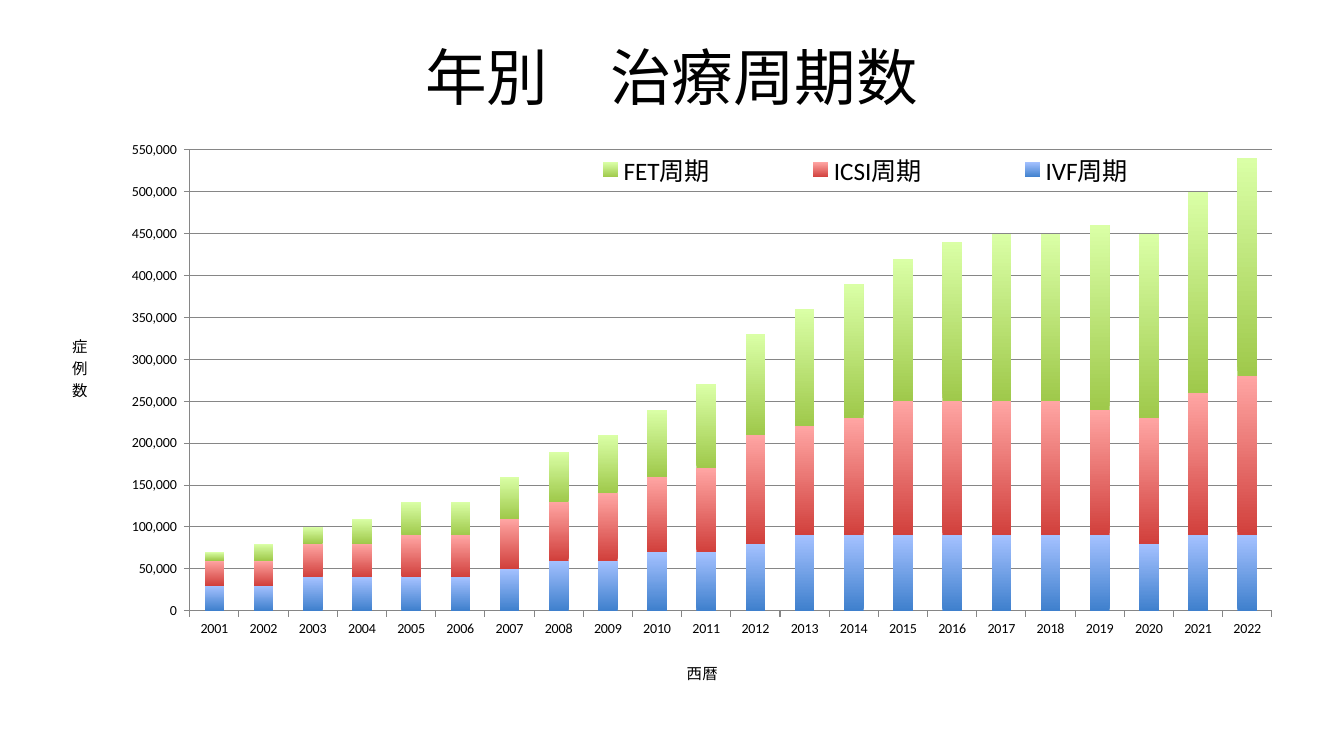
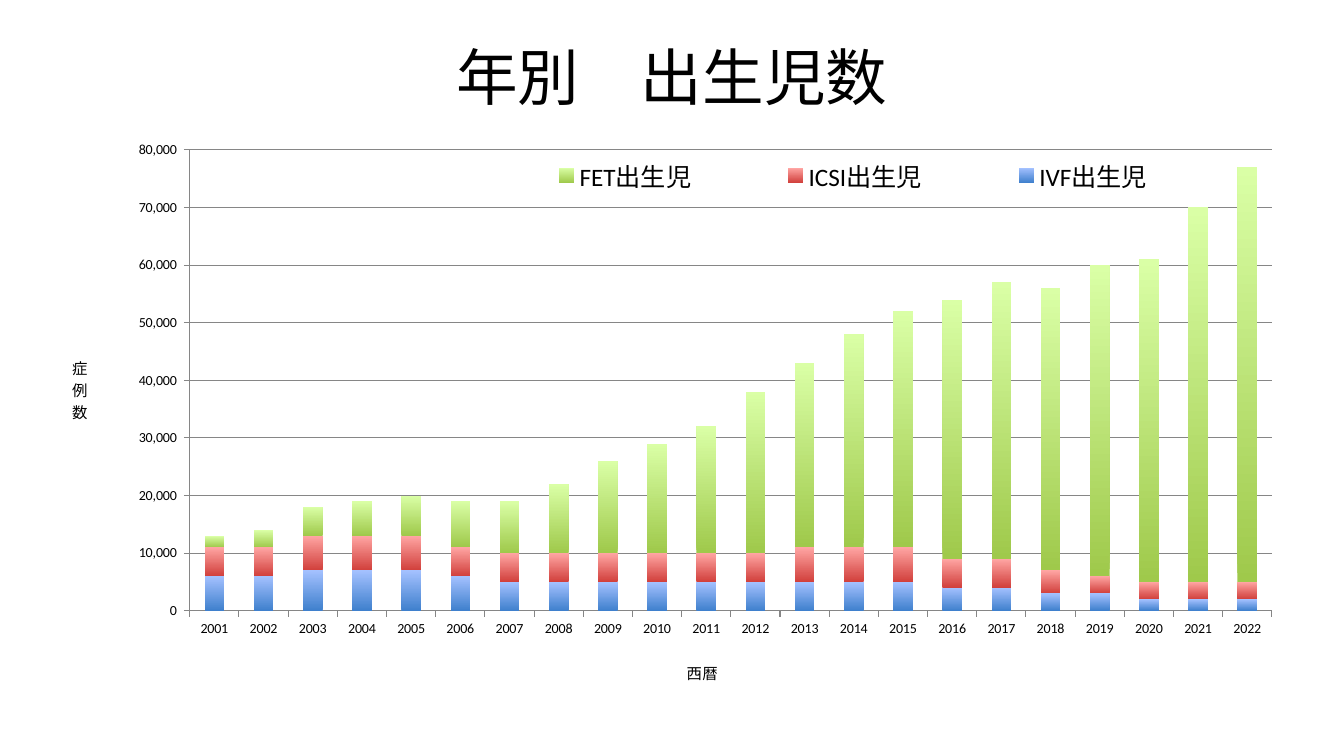
from lxml.etree import SubElement
from pptx import Presentation
from pptx.chart.data import CategoryChartData
from pptx.dml.color import RGBColor
from pptx.enum.chart import XL_CHART_TYPE, XL_LEGEND_POSITION, XL_TICK_MARK
from pptx.enum.text import MSO_ANCHOR, PP_ALIGN
from pptx.oxml import parse_xml
from pptx.oxml.ns import nsdecls, qn
from pptx.util import Pt

BLACK = RGBColor(0, 0, 0)
GRAY = RGBColor(0x86, 0x86, 0x86)
SHADES = [
    (RGBColor(0x3F, 0x80, 0xCD), RGBColor(0xA4, 0xC1, 0xFF)),
    (RGBColor(0xD1, 0x40, 0x3C), RGBColor(0xFF, 0xA5, 0xA3)),
    (RGBColor(0x9F, 0xC9, 0x4B), RGBColor(0xDA, 0xFF, 0xA6)),
]
LATIN, ASIAN = "Calibri", "Noto Sans CJK JP"
TITLE_BOX = (48, 21.6, 864, 65.5)
CHART_BOX = (31.7, 93.6, 895.7, 398.2)
PLOT = (0.116, 0.034, 0.863, 0.832)
FORMAT = r"#,##0_);[Red]\(#,##0\)"
YEARS = [str(year) for year in range(2001, 2023)]


def style(font, size, name=LATIN):
    font.size, font.name, font.bold = Pt(size), name, False
    font.color.rgb = BLACK


def write(frame, text, size, name=LATIN, align=PP_ALIGN.CENTER):
    para = frame.paragraphs[0]
    para.alignment = align
    run = para.add_run()
    run.text = text
    style(run.font, size, name)
    SubElement(run.font._element, qn("a:ea"), typeface=ASIAN)


def arrange(node, index, spot, inner=False):
    for old in node.xpath("c:layout"):
        node.remove(old)
    parts = '<c:layoutTarget val="inner"/>' if inner else ""
    parts += '<c:xMode val="edge"/><c:yMode val="edge"/>'
    parts += "".join(f'<c:{key} val="{num}"/>' for key, num in zip("xywh", spot))
    node.insert(index, parse_xml(
        f'<c:layout {nsdecls("c")}><c:manualLayout>{parts}</c:manualLayout></c:layout>'))


def add_title(slide, box, text):
    frame = slide.shapes.add_textbox(*map(Pt, box)).text_frame
    frame.word_wrap = True
    frame.vertical_anchor = MSO_ANCHOR.MIDDLE
    write(frame, text, 44, name=ASIAN)


def set_axis(axis, text, spot):
    axis.major_tick_mark = XL_TICK_MARK.OUTSIDE
    axis.minor_tick_mark = XL_TICK_MARK.NONE
    axis.format.line.color.rgb = GRAY
    axis.format.line.width = Pt(0.75)
    style(axis.tick_labels.font, 10)
    write(axis.axis_title.text_frame, text, 11)
    arrange(axis.axis_title._element, 1, spot)


def add_bars(slide, box, unit, rows, top, step, key, across, down):
    data = CategoryChartData(number_format=FORMAT)
    data.categories = YEARS
    for name, nums in rows:
        data.add_series(name, [num * unit for num in nums])
    chart = slide.shapes.add_chart(
        XL_CHART_TYPE.COLUMN_STACKED, *map(Pt, box), data).chart
    chart.has_title = False
    style(chart.font, 10)
    plot = chart.plots[0]
    plot.gap_width, plot.overlap = 150, 100
    plot.vary_by_categories = False
    for series, shades in zip(plot.series, SHADES):
        fill = series.format.fill
        fill.gradient()
        fill.gradient_angle = 90
        for stop, shade in zip(fill.gradient_stops, shades):
            stop.color.rgb = shade
    set_axis(chart.category_axis, "西暦", across)
    axis = chart.value_axis
    set_axis(axis, "症例数", down)
    body = axis.axis_title._element.xpath(".//a:bodyPr")[0]
    body.set("rot", "0")
    body.set("vert", "wordArtVert")
    axis.minimum_scale, axis.maximum_scale, axis.major_unit = 0, top, step
    axis.tick_labels.number_format = FORMAT
    axis.tick_labels.number_format_is_linked = False
    axis.has_major_gridlines = True
    grid = axis.major_gridlines.format.line
    grid.color.rgb, grid.width = GRAY, Pt(0.75)
    chart.has_legend = True
    legend = chart.legend
    legend.position = XL_LEGEND_POSITION.RIGHT
    legend.include_in_layout = False
    style(legend.font, 18)
    arrange(legend._element, 1, key)
    arrange(chart._chartSpace.xpath("c:chart/c:plotArea")[0], 0, PLOT, inner=True)


CYCLES = [
    ("IVF周期", [3, 3, 4, 4, 4, 4, 5, 6, 6, 7, 7, 8, 9, 9, 9, 9, 9, 9, 9, 8, 9, 9]),
    ("ICSI周期", [3, 3, 4, 4, 5, 5, 6, 7, 8, 9, 10,
                13, 13, 14, 16, 16, 16, 16, 15, 15, 17, 19]),
    ("FET周期", [1, 2, 2, 3, 4, 4, 5, 6, 7, 8, 10,
               12, 14, 16, 17, 19, 20, 20, 22, 22, 24, 26]),
]
BIRTHS = [
    ("IVF出生児", [6, 6, 7, 7, 7, 6, 5, 5, 5, 5, 5, 5, 5, 5, 5, 4, 4, 3, 3, 2, 2, 2]),
    ("ICSI出生児", [5, 5, 6, 6, 6, 5, 5, 5, 5, 5, 5, 5, 6, 6, 6, 5, 5, 4, 3, 3, 3, 3]),
    ("FET出生児", [2, 3, 5, 6, 7, 8, 9, 12, 16, 19, 22,
                28, 32, 37, 41, 45, 48, 49, 54, 56, 65, 72]),
]
PAGES = [
    ("年別　治療周期数", dict(
        unit=10000, rows=CYCLES, top=550000, step=50000,
        key=(0.37, 0.03, 0.57, 0.08), across=(0.51, 0.95), down=(0.02, 0.36))),
    ("年別　出生児数", dict(
        unit=1000, rows=BIRTHS, top=80000, step=10000,
        key=(0.34, 0.04, 0.61, 0.08), across=(0.51, 0.95), down=(0.02, 0.4))),
]


def main():
    deck = Presentation()
    deck.slide_width, deck.slide_height = Pt(960), Pt(540)
    for title, parts in PAGES:
        slide = deck.slides.add_slide(deck.slide_layouts[6])
        add_title(slide, TITLE_BOX, title)
        add_bars(slide, CHART_BOX, **parts)
    deck.save("out.pptx")


if __name__ == "__main__":
    main()
